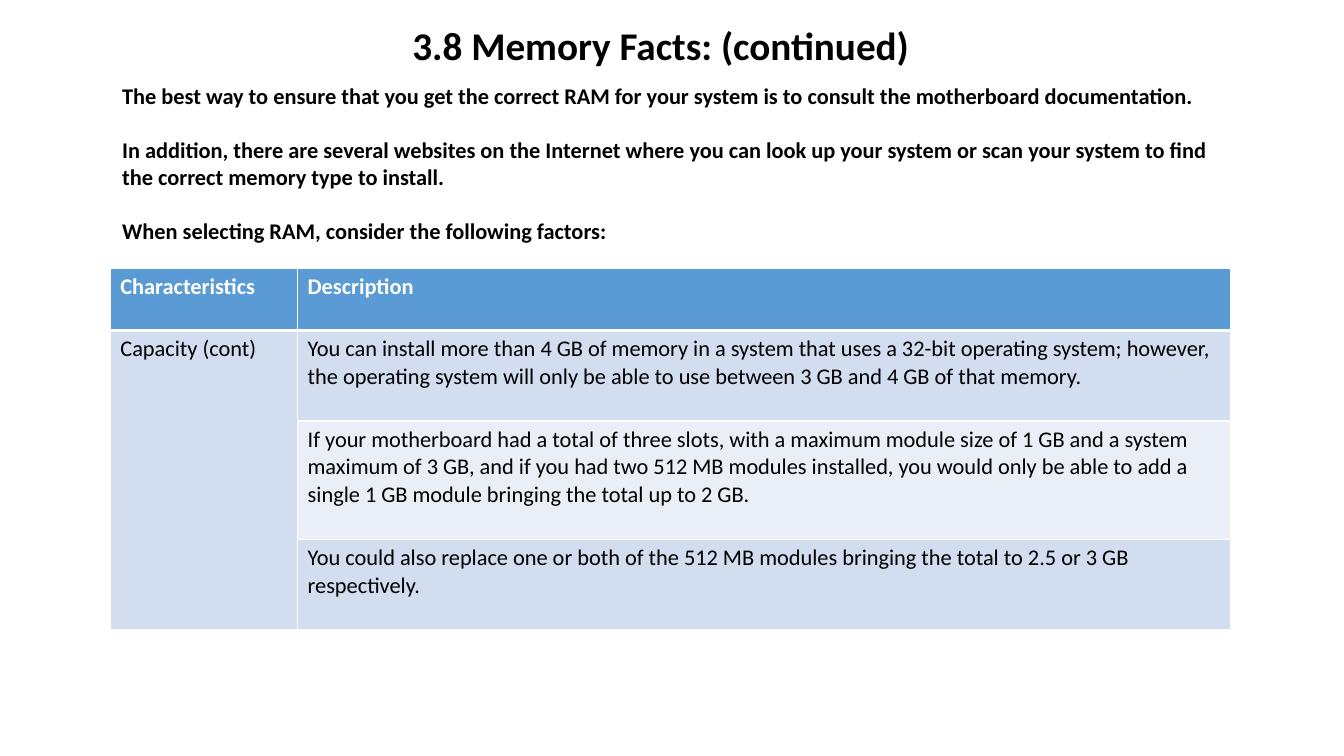
from lxml.etree import SubElement
from pptx import Presentation
from pptx.dml.color import RGBColor
from pptx.enum.text import PP_ALIGN
from pptx.oxml.ns import qn
from pptx.util import Cm, Pt

# Content
TITLE = "3.8 Memory Facts: (continued)"
INTRO = [
    "The best way to ensure that you get the correct RAM for your system is to consult the motherboard documentation.",
    "In addition, there are several websites on the Internet where you can look up your system or scan your system to find the correct memory type to install.",
    "When selecting RAM, consider the following factors:",
]
HEADER = ("Characteristics", "Description")
CHARACTERISTIC = "Capacity (cont)"
DESCRIPTIONS = [
    "You can install more than 4 GB of memory in a system that uses a 32-bit operating system; however, the operating system will only be able to use between 3 GB and 4 GB of that memory.",
    "If your motherboard had a total of three slots, with a maximum module size of 1 GB and a system maximum of 3 GB, and if you had two 512 MB modules installed, you would only be able to add a single 1 GB module bringing the total up to 2 GB.",
    "You could also replace one or both of the 512 MB modules bringing the total to 2.5 or 3 GB respectively.",
]
COLORS = {"text": "000000", "white": "FFFFFF", "header": "5B9BD5",
          "band": "D2DEEF", "light_band": "EAEFF7"}
FONT = "Calibri"
COLUMN_WIDTHS = (4.72, 23.5)
ROW_HEIGHTS = (1.57, 2.28, 2.98, 2.28)


def style(para, size, color="text", bold=False):
    para.font.name = FONT
    para.font.size = Pt(size)
    para.font.bold = bold
    para.font.color.rgb = RGBColor.from_string(COLORS[color])


def add_text(page, paragraphs, left, top, width, height, size, wrap, align, gap=0):
    box = page.shapes.add_textbox(Cm(left), Cm(top), Cm(width), Cm(height))
    frame = box.text_frame
    frame.word_wrap = wrap
    for index, text in enumerate(paragraphs):
        para = frame.add_paragraph() if index else frame.paragraphs[0]
        para.text = text
        para.alignment = align
        if index:
            para.space_before = Pt(gap)
        style(para, size, bold=True)


def add_border(cell, side, width):
    line = SubElement(cell._tc.get_or_add_tcPr(), qn(f"a:ln{side}"), w=str(Pt(width)))
    fill = SubElement(line, qn("a:solidFill"))
    SubElement(fill, qn("a:srgbClr"), val=COLORS["white"])


def build_table(page):
    rows = [HEADER] + [("" if index else CHARACTERISTIC, text)
                       for index, text in enumerate(DESCRIPTIONS)]
    table = page.shapes.add_table(
        len(rows), len(HEADER), Cm(2.78), Cm(6.76),
        Cm(sum(COLUMN_WIDTHS)), Cm(sum(ROW_HEIGHTS))).table
    for column, width in zip(table.columns, COLUMN_WIDTHS):
        column.width = Cm(width)
    for row, height in zip(table.rows, ROW_HEIGHTS):
        row.height = Cm(height)

    for r, texts in enumerate(rows):
        for c, text in enumerate(texts):
            cell = table.cell(r, c)
            # A thick rule separates the header from the body
            for side in "LRTB":
                thick = (r, side) in ((0, "B"), (1, "T"))
                add_border(cell, side, 3 if thick else 1)
            # The first column keeps one colour; descriptions alternate
            if r == 0:
                color = "header"
            else:
                color = "light_band" if c and r % 2 == 0 else "band"
            cell.fill.solid()
            cell.fill.fore_color.rgb = RGBColor.from_string(COLORS[color])
            para = cell.text_frame.paragraphs[0]
            para.text = text
            style(para, 16, "text" if r else "white", bold=r == 0)
    table.cell(1, 0).merge(table.cell(len(rows) - 1, 0))


def main():
    deck = Presentation()
    deck.slide_width, deck.slide_height = Cm(33.87), Cm(19.05)
    page = deck.slides.add_slide(deck.slide_layouts[6])

    # Title and introduction
    add_text(page, [TITLE], 10.06, 0.41, 13.18, 1.45, 28, False, PP_ALIGN.CENTER)
    add_text(page, INTRO, 2.83, 1.95, 28.22, 4.7, 16, True, PP_ALIGN.LEFT, gap=19.5)

    # Memory factors
    build_table(page)
    deck.save("out.pptx")


if __name__ == "__main__":
    main()
